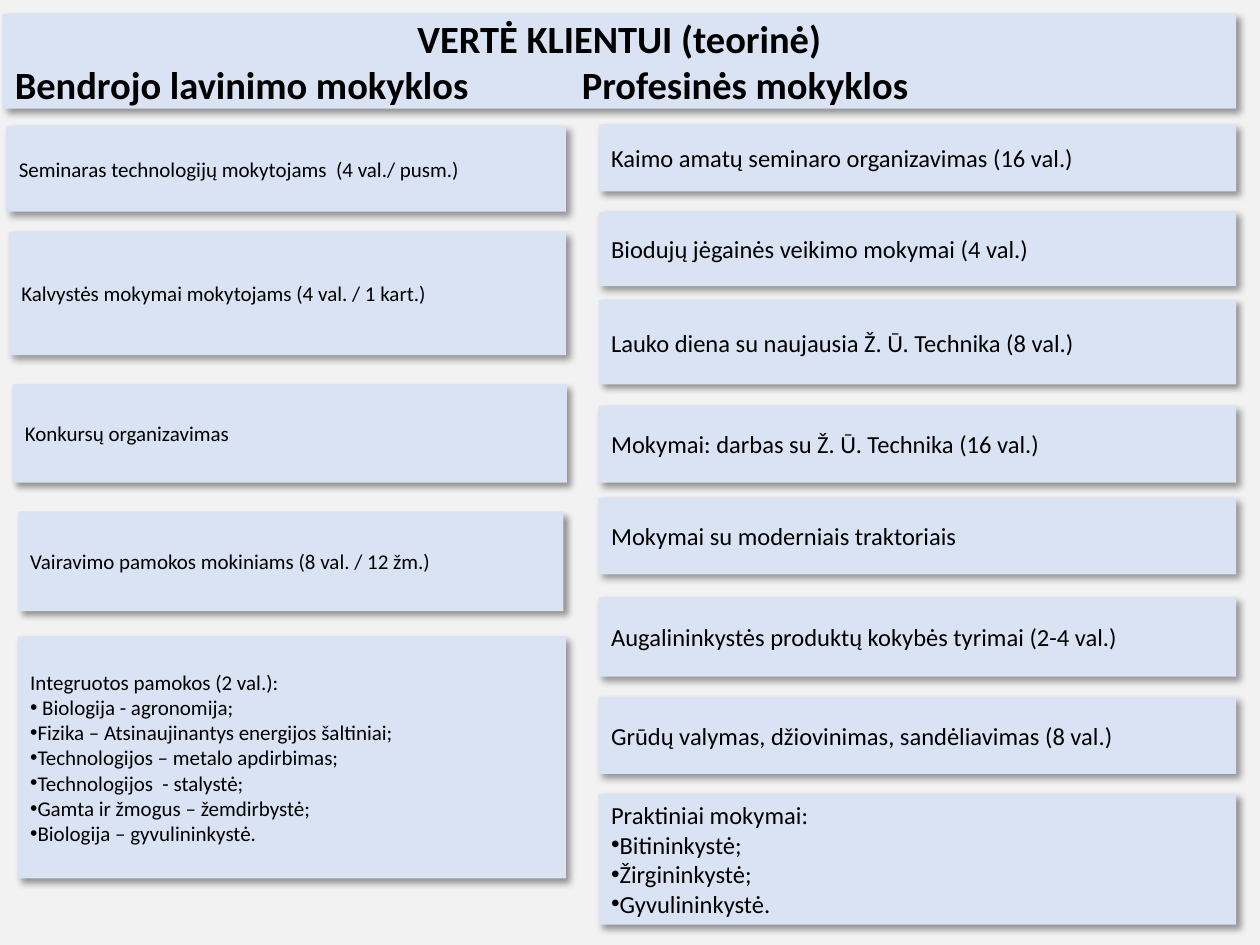
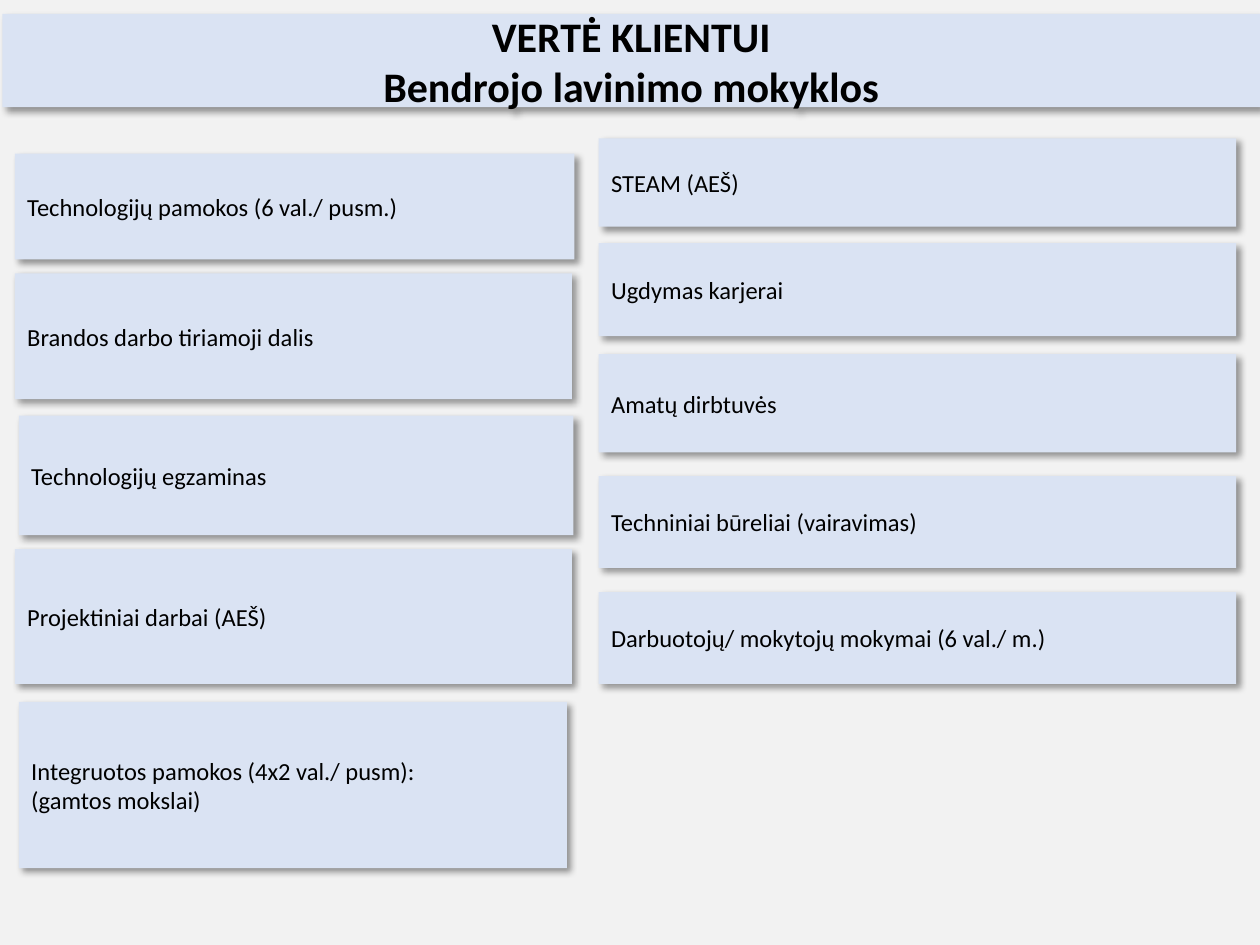
from lxml.etree import SubElement
from pptx import Presentation
from pptx.dml.color import RGBColor
from pptx.enum.shapes import MSO_SHAPE as Shape
from pptx.enum.text import MSO_ANCHOR as Anchor, PP_ALIGN as Align
from pptx.oxml.ns import qn
from pptx.util import Cm, Pt

COLOURS = {"background": "F2F2F2", "card": "DAE3F3", "text": "000000", "shadow": "000000"}
FONT = "Calibri"
BULLET = "•"
RIGHT_LEFT, RIGHT_WIDTH = 12.07, 12.85


def colour(name):
    return RGBColor.from_string(COLOURS[name])


class Deck:
    """Holds the shared style and the current slide."""

    def __init__(self):
        self.presentation = Presentation()
        self.presentation.slide_width = Cm(25.4)
        self.presentation.slide_height = Cm(19.05)
        self.slide = None

    def add_slide(self):
        self.slide = self.presentation.slides.add_slide(self.presentation.slide_layouts[6])
        fill = self.slide.background.fill
        fill.solid()
        fill.fore_color.rgb = colour("background")

    def panel(self, left, top, width, height):
        """Borderless rectangle with a soft shadow."""
        shape = self.slide.shapes.add_shape(
            Shape.RECTANGLE, Cm(left), Cm(top), Cm(width), Cm(height))
        shape.fill.solid()
        shape.fill.fore_color.rgb = colour("card")
        shape.line.fill.background()
        shape.shadow.inherit = False
        effects = shape._element.spPr.find(qn("a:effectLst"))
        shadow = SubElement(effects, qn("a:outerShdw"), blurRad=str(Pt(4)), dist=str(Pt(3)),
                            dir=str(45 * 60000), algn="tl", rotWithShape="0")
        shade = SubElement(shadow, qn("a:srgbClr"), val=COLOURS["shadow"])
        SubElement(shade, qn("a:alpha"), val="40000")
        shape.text_frame.word_wrap = True
        shape.text_frame.vertical_anchor = Anchor.MIDDLE
        return shape.text_frame

    def add_lines(self, frame, lines, size, aligns=(), bold=False):
        """One paragraph per line; a leading bullet sign makes a list item."""
        for index, line in enumerate(lines):
            paragraph = frame.paragraphs[0] if index == 0 else frame.add_paragraph()
            paragraph.alignment = aligns[index] if aligns else Align.LEFT
            if line.startswith(BULLET):
                properties = paragraph._p.get_or_add_pPr()
                SubElement(properties, qn("a:buFont"), typeface="Arial")
                SubElement(properties, qn("a:buChar"), char=BULLET)
            run = paragraph.add_run()
            run.text = line.removeprefix(BULLET)
            run.font.name = FONT
            run.font.size = Pt(size)
            run.font.bold = bold
            run.font.color.rgb = colour("text")

    def header(self, width, height, lines, size, aligns):
        self.add_lines(self.panel(0.05, 0.28, width, height), lines, size, aligns, bold=True)

    def left_column(self, cards, size):
        for left, top, width, height, *lines in cards:
            self.add_lines(self.panel(left, top, width, height), lines, size)

    def right_column(self, cards, size=14):
        for top, height, *lines in cards:
            self.add_lines(self.panel(RIGHT_LEFT, top, RIGHT_WIDTH, height), lines, size)


def theory_slide(deck):
    deck.add_slide()
    deck.header(24.87, 1.91,
                ["VERTĖ KLIENTUI (teorinė)", "Bendrojo lavinimo mokyklos\t\tProfesinės mokyklos"],
                22, [Align.CENTER, Align.LEFT])
    # General schools: left, top, width, height, lines
    deck.left_column([
        (0.13, 2.54, 11.28, 1.73, "Seminaras technologijų mokytojams  (4 val./ pusm.)"),
        (0.18, 4.67, 11.23, 2.49, "Kalvystės mokymai mokytojams (4 val. / 1 kart.)"),
        (0.25, 7.75, 11.18, 1.98, "Konkursų organizavimas"),
        (0.36, 10.31, 11, 2.01, "Vairavimo pamokos mokiniams (8 val. / 12 žm.)"),
        (0.36, 12.83, 11.05, 4.88,
         "Integruotos pamokos (2 val.):",
         "• Biologija - agronomija;",
         "•Fizika – Atsinaujinantys energijos šaltiniai;",
         "•Technologijos – metalo apdirbimas;",
         "•Technologijos  - stalystė;",
         "•Gamta ir žmogus – žemdirbystė;",
         "•Biologija – gyvulininkystė."),
    ], 12)
    # Vocational schools: top, height, lines
    deck.right_column([
        (2.51, 1.35, "Kaimo amatų seminaro organizavimas (16 val.)"),
        (4.27, 1.5, "Biodujų jėgainės veikimo mokymai (4 val.)"),
        (6.05, 1.7, "Lauko diena su naujausia Ž. Ū. Technika (8 val.)"),
        (8.18, 1.55, "Mokymai: darbas su Ž. Ū. Technika (16 val.)"),
        (10.03, 1.55, "Mokymai su moderniais traktoriais"),
        (12.04, 1.6, "Augalininkystės produktų kokybės tyrimai (2-4 val.)"),
        (14.05, 1.55, "Grūdų valymas, džiovinimas, sandėliavimas (8 val.)"),
        (16, 2.64, "Praktiniai mokymai:", "•Bitininkystė;", "•Žirgininkystė;", "•Gyvulininkystė."),
    ])


def general_schools_slide(deck):
    deck.add_slide()
    deck.header(25.35, 1.88, ["VERTĖ KLIENTUI", "Bendrojo lavinimo mokyklos"],
                24, [Align.CENTER, Align.CENTER])
    # Lessons and exams
    deck.left_column([
        (0.3, 3.1, 11.28, 2.13, "Technologijų pamokos (6 val./ pusm.)"),
        (0.3, 5.51, 11.23, 2.54, "Brandos darbo tiriamoji dalis"),
        (0.38, 8.38, 11.18, 2.41, "Technologijų egzaminas"),
        (0.3, 11.07, 11.23, 2.72, "Projektiniai darbai (AEŠ)"),
        (0.38, 14.15, 11.05, 3.35, "Integruotos pamokos (4x2 val./ pusm):", "(gamtos mokslai)"),
    ], 14)
    # Activities and training
    deck.right_column([
        (2.79, 1.78, "STEAM (AEŠ)"),
        (4.9, 1.88, "Ugdymas karjerai"),
        (7.14, 1.98, "Amatų dirbtuvės"),
        (9.6, 1.85, "Techniniai būreliai (vairavimas)"),
        (11.94, 1.85, "Darbuotojų/ mokytojų mokymai (6 val./ m.)"),
    ])


def main():
    deck = Deck()
    theory_slide(deck)
    general_schools_slide(deck)
    deck.presentation.save("out.pptx")


if __name__ == "__main__":
    main()
